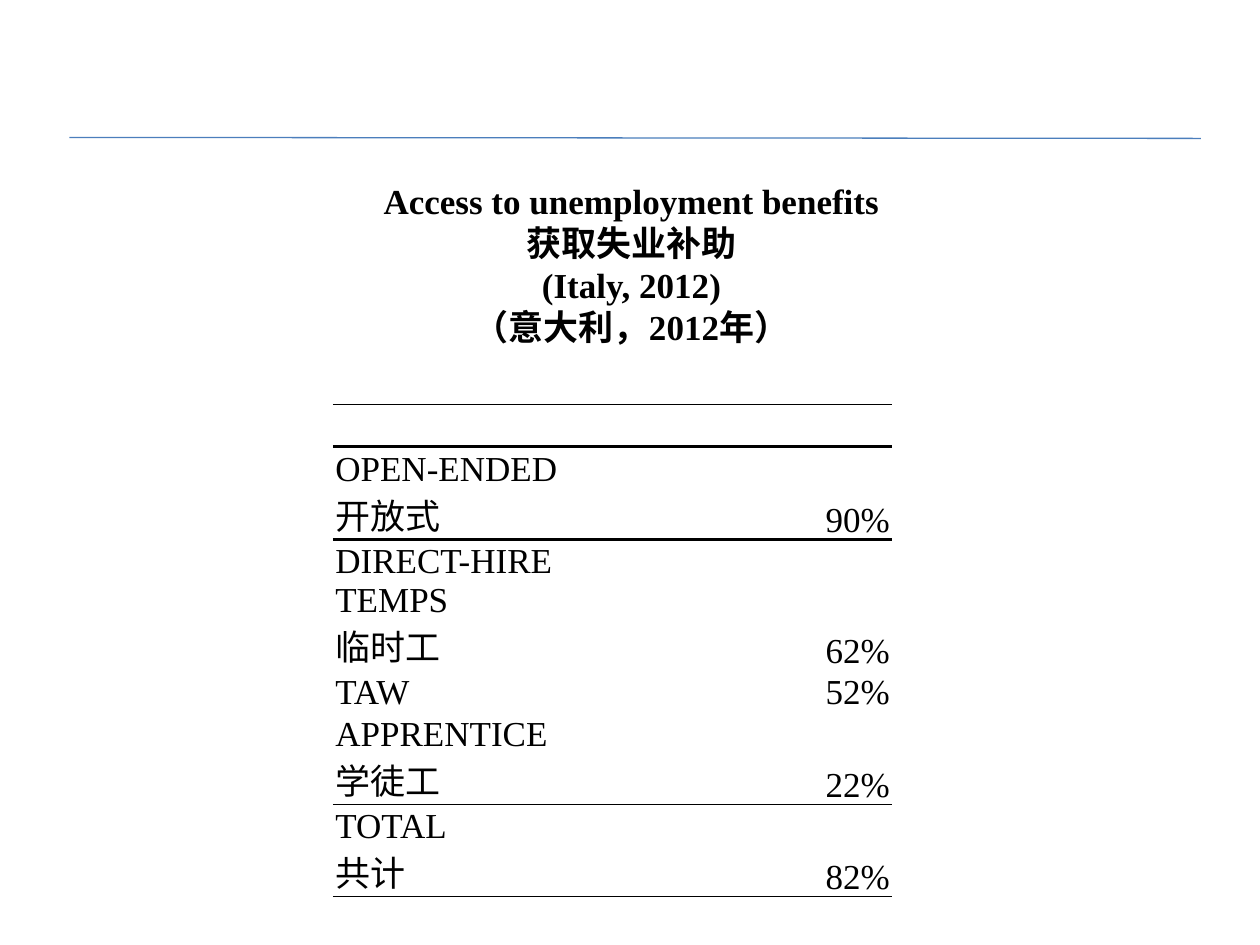
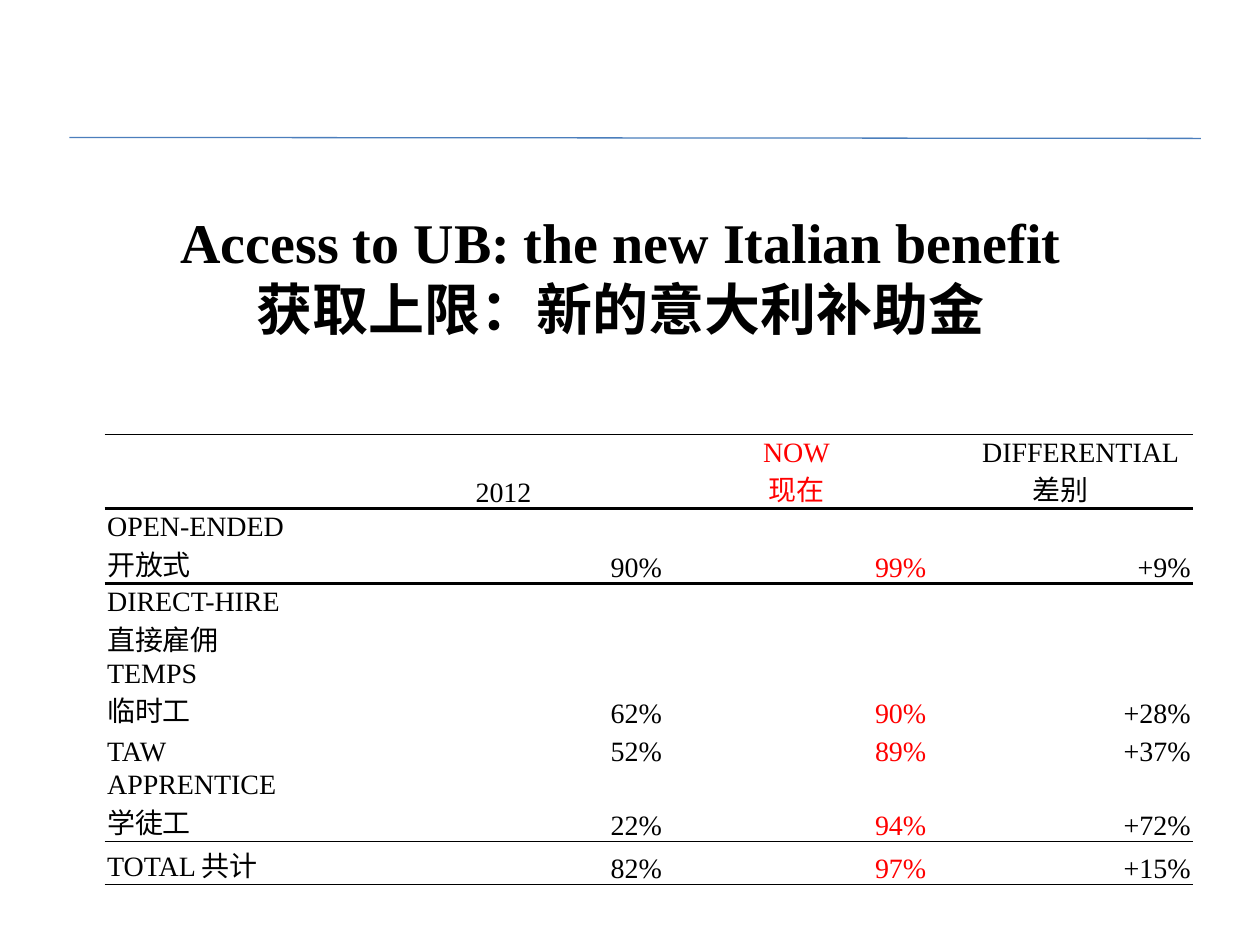
"""Build two slides on access to unemployment benefits in Italy."""
from dataclasses import dataclass
from itertools import groupby

from lxml import etree
from pptx import Presentation
from pptx import util as u
from pptx.dml import color as dml
from pptx.enum import shapes, text
from pptx.oxml import ns

COLORS = {"ink": "000000", "now": "FF0000", "rule": "4B7EBC"}
LATIN, CHINESE = "Times New Roman", "Arial"
PLAIN_TABLE = "{2D5ABB26-0587-4C30-8999-92F81FD0307C}"
COLUMN_WIDTHS = (4.8, 6.48, 5.33, 5.33)
RULES_BELOW = {0: 0.5, 1: 2, 5: 0.5, 6: 0.5}
NOW_COLUMN = 2
HEADER_ROW = 1
TITLE_SIZE = (22.86, 3.18)
CELL_INSET = 0.05


@dataclass(frozen=True)
class BenefitSlide:
    title: str
    title_at: tuple[float, float]
    title_points: int
    table_at: tuple[float, float]
    table_points: int
    row_heights: tuple[float, ...]
    rows: tuple[tuple[str, ...], ...]


SLIDES = (
    BenefitSlide(
        title="Access to unemployment benefits\n获取失业补助\n(Italy, 2012)\n（意大利，2012年）",
        title_at=(1.3, 3.73),
        title_points=20,
        table_at=(6.71, 7.32),
        table_points=20,
        row_heights=(0.84, 0.84, 1.88, 2.64, 0.84, 1.83, 1.85),
        rows=(
            ("", ""),
            ("", ""),
            ("OPEN-ENDED开放式", "90%"),
            ("DIRECT-HIRE\nTEMPS\n临时工", "62%"),
            ("TAW", "52%"),
            ("APPRENTICE\n学徒工", "22%"),
            ("TOTAL\n共计", "82%"),
        ),
    ),
    BenefitSlide(
        title="Access to UB: the new Italian benefit\n获取上限：新的意大利补助金",
        title_at=(1.09, 3.94),
        title_points=32,
        table_at=(2.11, 7.92),
        table_points=16,
        row_heights=(0.84, 1.5, 1.5, 2.95, 0.76, 1.47, 0.86),
        rows=(
            ("", "", "", ""),
            ("", "2012", "NOW\n现在", "DIFFERENTIAL\n差别"),
            ("OPEN-ENDED\n开放式", "90%", "99%", "+9%"),
            ("DIRECT-HIRE\n直接雇佣\nTEMPS\n临时工", "62%", "90%", "+28%"),
            ("TAW", "52%", "89%", "+37%"),
            ("APPRENTICE\n学徒工", "22%", "94%", "+72%"),
            ("TOTAL 共计", "82%", "97%", "+15%"),
        ),
    ),
)


def rgb(name: str) -> dml.RGBColor:
    return dml.RGBColor.from_string(COLORS[name])


def format_run(run, points: int, color: str, font: str = LATIN) -> None:
    run.font.size = u.Pt(points)
    run.font.name = font
    run.font.color.rgb = rgb(color)


def draw_header_rule(slide) -> None:
    rule = slide.shapes.add_connector(
        shapes.MSO_CONNECTOR.STRAIGHT, u.Cm(1.4), u.Cm(2.77), u.Cm(24.21), u.Cm(2.79)
    )
    rule.line.color.rgb = rgb("rule")
    rule.line.width = u.Pt(0.75)
    etree.SubElement(rule._element.spPr, ns.qn("a:effectLst"))


def fill_title(slide, content: BenefitSlide) -> None:
    title = slide.shapes.title
    title.left, title.top = map(u.Cm, content.title_at)
    title.width, title.height = map(u.Cm, TITLE_SIZE)
    frame = title.text_frame
    frame.word_wrap = True
    frame.auto_size = text.MSO_AUTO_SIZE.NONE
    frame.vertical_anchor = text.MSO_ANCHOR.MIDDLE
    for number, line in enumerate(content.title.split("\n")):
        paragraph = frame.add_paragraph() if number else frame.paragraphs[0]
        paragraph.alignment = text.PP_ALIGN.CENTER
        for is_latin, letters in groupby(line, str.isascii):
            run = paragraph.add_run()
            run.text = "".join(letters)
            font = LATIN if is_latin else CHINESE
            format_run(run, content.title_points, "ink", font)
            run.font.bold = True
            etree.SubElement(run.font._element, ns.qn("a:ea"), typeface=CHINESE)


def draw_cell_rule(cell, side: str, points: float) -> None:
    line = etree.Element(ns.qn(f"a:{side}"), w=str(u.Pt(points)))
    fill = etree.SubElement(line, ns.qn("a:solidFill"))
    etree.SubElement(fill, ns.qn("a:srgbClr"), val=COLORS["ink"])
    cell._tc.get_or_add_tcPr().insert(0, line)


def fill_cell(cell, wording: str, row: int, column: int, points: int) -> None:
    cell.fill.background()
    cell.margin_left = cell.margin_right = cell.margin_top = u.Cm(CELL_INSET)
    cell.margin_bottom = 0
    cell.vertical_anchor = text.MSO_ANCHOR.BOTTOM
    for side, above in (("lnB", row), ("lnT", row - 1)):
        if above in RULES_BELOW:
            draw_cell_rule(cell, side, RULES_BELOW[above])
    if not wording:
        return
    cell.text_frame.text = wording
    for paragraph in cell.text_frame.paragraphs:
        if row == HEADER_ROW:
            paragraph.alignment = text.PP_ALIGN.CENTER
        elif column:
            paragraph.alignment = text.PP_ALIGN.RIGHT
        if paragraph.text == "DIFFERENTIAL":
            paragraph._p.get_or_add_pPr().set("marL", str(u.Cm(0.8)))
        for run in paragraph.runs:
            format_run(run, points, "now" if column == NOW_COLUMN else "ink")


def draw_benefit_table(slide, content: BenefitSlide) -> None:
    widths = COLUMN_WIDTHS[: len(content.rows[0])]
    frame = slide.shapes.add_table(
        len(content.rows), len(widths), *map(u.Cm, content.table_at),
        u.Cm(sum(widths)), u.Cm(sum(content.row_heights)),
    )
    table = frame.table
    table.first_row = table.horz_banding = False
    table._tbl.tblPr.find(ns.qn("a:tableStyleId")).text = PLAIN_TABLE
    for column, width in zip(table.columns, widths):
        column.width = u.Cm(width)
    for row, height in zip(table.rows, content.row_heights):
        row.height = u.Cm(height)
    for row, wordings in enumerate(content.rows):
        for column, wording in enumerate(wordings):
            fill_cell(table.cell(row, column), wording, row, column, content.table_points)
    if len(widths) > 2:
        table.cell(0, 1).merge(table.cell(0, len(widths) - 1))


def main() -> None:
    deck = Presentation()
    deck.slide_width, deck.slide_height = u.Cm(25.4), u.Cm(19.05)
    title_only = deck.slide_layouts[5]
    for content in SLIDES:
        slide = deck.slides.add_slide(title_only)
        draw_header_rule(slide)
        fill_title(slide, content)
        draw_benefit_table(slide, content)
    deck.save("out.pptx")


if __name__ == "__main__":
    main()
